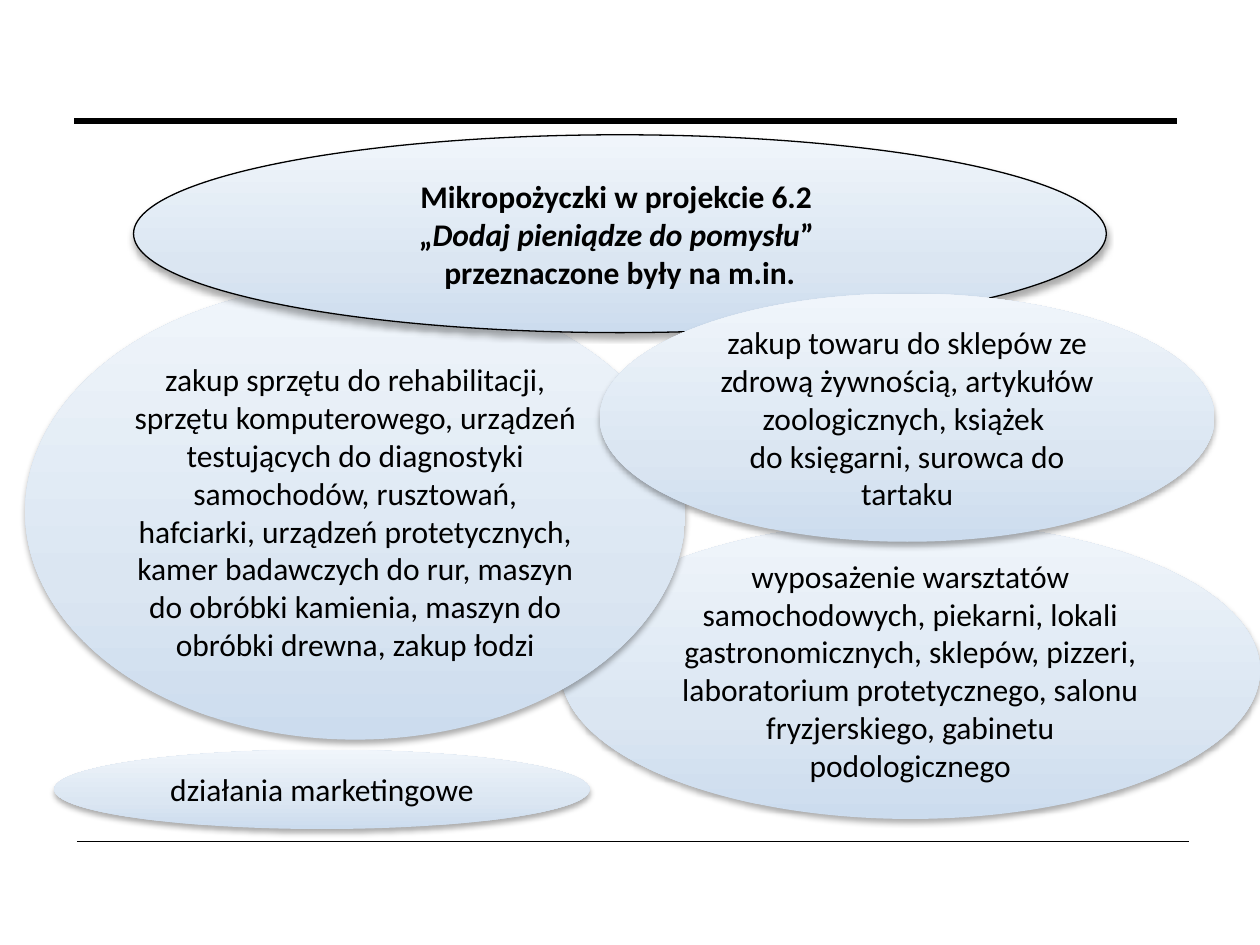
from dataclasses import dataclass

from lxml import etree
from pptx import Presentation
from pptx.dml.color import RGBColor
from pptx.enum.shapes import MSO_CONNECTOR, MSO_SHAPE
from pptx.enum.text import MSO_ANCHOR, PP_ALIGN
from pptx.oxml import parse_xml
from pptx.oxml.ns import nsdecls, qn
from pptx.util import Inches, Pt

ELLIPSE = MSO_SHAPE.OVAL
HEADING_ELLIPSE = MSO_SHAPE.FLOWCHART_CONNECTOR
STRAIGHT = MSO_CONNECTOR.STRAIGHT
CENTER = PP_ALIGN.CENTER
MIDDLE = MSO_ANCHOR.MIDDLE
BLANK_LAYOUT = 6


@dataclass(frozen=True)
class Theme:
    font: str = "Calibri"
    size: float = 18
    ink: RGBColor = RGBColor(0, 0, 0)
    gradient: tuple = ((0, "CCDCEE"), (35, "DBE6F2"), (100, "F0F5FB"))
    outline: float = 0.75
    top_rule: float = 3
    bottom_rule: float = 0.25


THEME = Theme()

# Back to front: left, top, width, height, text
EQUIPMENT_ELLIPSES = [
    (4.45, 4.14, 5.55, 2.36,
     "wyposażenie warsztatów samochodowych, piekarni, lokali gastronomicznych, "
     "sklepów, pizzeri, laboratorium protetycznego, salonu fryzjerskiego, "
     "gabinetu podologicznego"),
    (0.2, 2.25, 5.24, 3.62,
     "zakup sprzętu do rehabilitacji, sprzętu komputerowego, urządzeń "
     "testujących do diagnostyki samochodów, rusztowań, hafciarki, urządzeń "
     "protetycznych, kamer badawczych do rur, maszyn do obróbki kamienia, "
     "maszyn do obróbki drewna, zakup łodzi"),
    (0.43, 5.95, 4.25, 0.63, "działania marketingowe"),
]
HEADING_BOX = (1.06, 1.07, 7.72, 1.57)
HEADING_LINES = [
    ["Mikropożyczki w projekcie 6.2 "],
    ["„", "Dodaj pieniądze do pomysłu", "” "],
    ["przeznaczone były na m.in."],
]
GOODS_ELLIPSE = (
    4.76, 2.33, 4.88, 1.97,
    "zakup towaru do sklepów ze zdrową żywnością, artykułów zoologicznych, "
    "książek \vdo księgarni, surowca do tartaku")


def add_rule(slide, left, right, y, weight):
    rule = slide.shapes.add_connector(
        STRAIGHT, Inches(left), Inches(y), Inches(right), Inches(y))
    rule.line.color.rgb = THEME.ink
    rule.line.width = Pt(weight)
    etree.SubElement(rule._element.spPr, qn("a:effectLst"))


def apply_gradient(shape):
    """Three-stop gradient that lightens upwards."""
    shape.fill.gradient()
    gradient = shape._element.spPr.find(qn("a:gradFill"))
    stops = "".join(
        f'<a:gs pos="{position * 1000}"><a:srgbClr val="{color}"/></a:gs>'
        for position, color in THEME.gradient)
    gradient.getparent().replace(gradient, parse_xml(
        f'<a:gradFill {nsdecls("a")} rotWithShape="1"><a:gsLst>{stops}</a:gsLst>'
        '<a:lin ang="16200000" scaled="0"/></a:gradFill>'))


def apply_shadow(shape):
    shape.shadow.inherit = False
    effects = shape._element.spPr.find(qn("a:effectLst"))
    effects.append(parse_xml(
        f'<a:outerShdw {nsdecls("a")} blurRad="{Pt(3.5)}" dist="{Pt(2.2)}" '
        'dir="5400000" rotWithShape="0"><a:srgbClr val="000000">'
        '<a:alpha val="32000"/></a:srgbClr></a:outerShdw>'))


def add_ellipse(slide, preset, left, top, width, height):
    ellipse = slide.shapes.add_shape(
        preset, Inches(left), Inches(top), Inches(width), Inches(height))
    apply_gradient(ellipse)
    ellipse.line.fill.background()
    apply_shadow(ellipse)
    ellipse.text_frame.word_wrap = True
    ellipse.text_frame.vertical_anchor = MIDDLE
    return ellipse


def format_paragraph(paragraph, bold=False):
    paragraph.alignment = CENTER
    for run in paragraph.runs:
        run.font.name = THEME.font
        run.font.size = Pt(THEME.size)
        run.font.color.rgb = THEME.ink
        run.font.bold = bold


def add_purpose(slide, left, top, width, height, text):
    ellipse = add_ellipse(slide, ELLIPSE, left, top, width, height)
    purpose = ellipse.text_frame.paragraphs[0]
    purpose.text = text
    format_paragraph(purpose)


def add_heading(slide):
    ellipse = add_ellipse(slide, HEADING_ELLIPSE, *HEADING_BOX)
    ellipse.line.color.rgb = THEME.ink
    ellipse.line.width = Pt(THEME.outline)
    frame = ellipse.text_frame
    for index, parts in enumerate(HEADING_LINES):
        line = frame.add_paragraph() if index else frame.paragraphs[0]
        for part in parts:
            line.add_run().text = part
        format_paragraph(line, bold=True)
    # Project name in italics
    frame.paragraphs[1].runs[1].font.italic = True


def main():
    deck = Presentation()
    deck.slide_width, deck.slide_height = Inches(10), Inches(7.5)
    slide = deck.slides.add_slide(deck.slide_layouts[BLANK_LAYOUT])

    # Page rules
    add_rule(slide, 0.61, 9.44, 6.68, THEME.bottom_rule)
    add_rule(slide, 0.59, 9.34, 0.96, THEME.top_rule)

    # Loan purposes, with the heading overlapping those behind it
    for purpose in EQUIPMENT_ELLIPSES:
        add_purpose(slide, *purpose)
    add_heading(slide)
    add_purpose(slide, *GOODS_ELLIPSE)

    deck.save("out.pptx")


if __name__ == "__main__":
    main()
